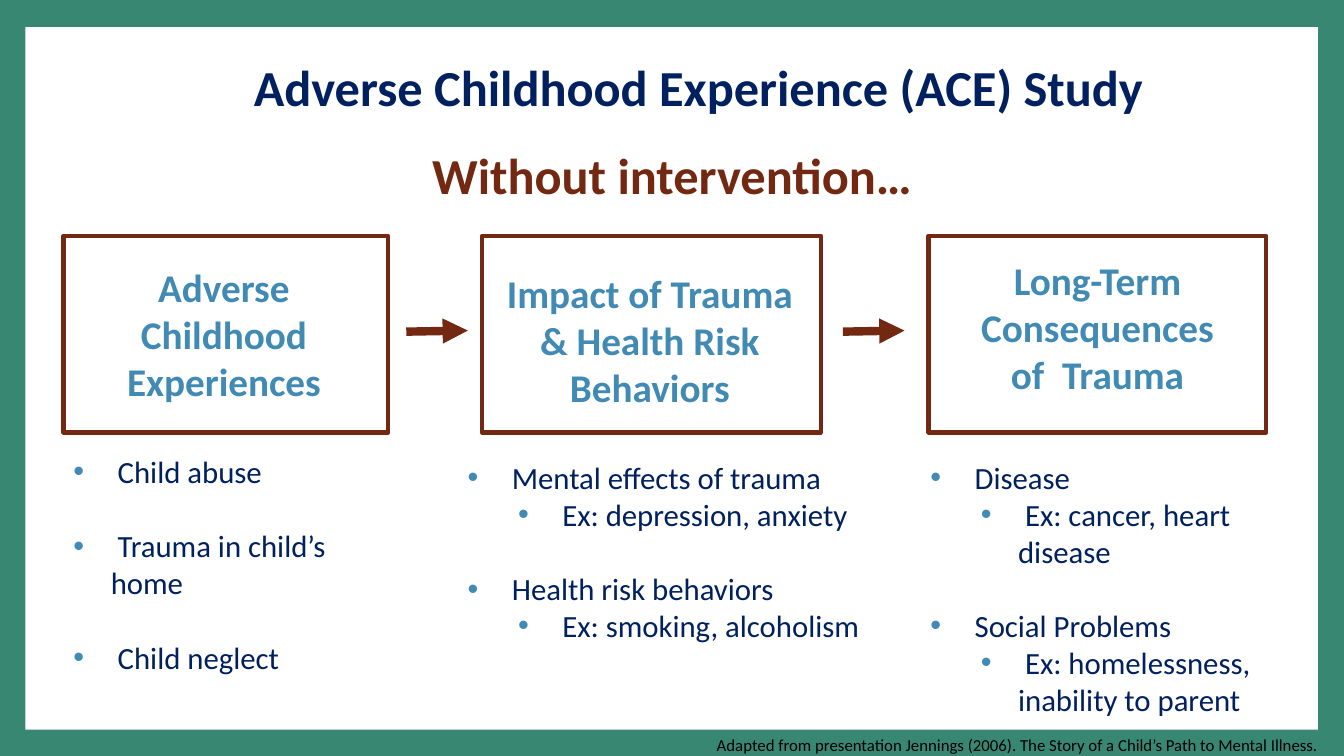
from dataclasses import dataclass

from lxml import etree
from pptx import Presentation, util as u
from pptx.dml.color import RGBColor
from pptx.enum import shapes, text
from pptx.oxml.ns import qn

WIDE, HIGH = 13.33, 7.5
NAVY, RUST, BLUE, GREEN = "002060", "722811", "418AB3", "388773"
WHITE, BLACK = "FFFFFF", "000000"
FONT = "Calibri"
BOX_TOP, BOX_HIGH, HEAD_HIGH = 31.2, 26, 20.13
HANG, STEP, GAP = 0.37, 0.5, 26.8


@dataclass(frozen=True)
class Area:
    left: float
    top: float
    width: float
    height: float

    def place(self) -> tuple[int, int, int, int]:
        return across(self.left), down(self.top), across(self.width), down(self.height)


@dataclass(frozen=True)
class Item:
    words: str
    level: int = 0
    gap: bool = False


@dataclass(frozen=True)
class Stage:
    left: float
    width: float
    head: Area
    lines: tuple[str, ...]
    body: Area
    items: tuple[Item, ...]


STAGES = (
    Stage(4.73, 24.16, Area(4.73, 34.13, 23.86, HEAD_HIGH),
          ("Adverse Childhood", "Experiences"),
          Area(4.73, 59.2, 25.51, 30.93),
          (Item(" Child abuse"),
           Item(" Trauma in child’s home", gap=True),
           Item(" Child neglect", gap=True))),
    Stage(35.86, 25.21, Area(35.78, 34.93, 25.13, HEAD_HIGH),
          ("Impact of Trauma & Health Risk Behaviors",),
          Area(34.06, 60, 31.58, 30.53),
          (Item(" Mental effects of trauma"),
           Item(" Ex: depression, anxiety", 1),
           Item(" Health risk behaviors", gap=True),
           Item(" Ex: smoking, alcoholism", 1))),
    Stage(69.09, 25.13, Area(69.09, 33.2, 25.13, HEAD_HIGH),
          ("Long-Term Consequences", "of  Trauma"),
          Area(68.49, 60, 30.16, 36),
          (Item(" Disease"),
           Item(" Ex: cancer, heart disease", 1),
           Item(" Social Problems", gap=True),
           Item(" Ex: homelessness, inability to parent", 1))),
)
ARROWS = (30.23, 62.72)


def across(share: float) -> int:
    return u.Inches(WIDE * share / 100)


def down(share: float) -> int:
    return u.Inches(HIGH * share / 100)


def color(code: str) -> RGBColor:
    return RGBColor.from_string(code)


def write(para, words: str, *, size: float, ink: str, bold: bool = False,
          center: bool = False, space: float = 1) -> None:
    run = para.add_run()
    run.text = words
    run.font.name = FONT
    run.font.size = u.Pt(size)
    run.font.bold = bold
    run.font.color.rgb = color(ink)
    para.alignment = text.PP_ALIGN.CENTER if center else text.PP_ALIGN.LEFT
    para.line_spacing = space


def add_text(slide, area: Area, lines: tuple[str, ...], **style) -> list:
    frame = slide.shapes.add_textbox(*area.place()).text_frame
    frame.word_wrap = True
    for _ in lines[1:]:
        frame.add_paragraph()
    for para, words in zip(frame.paragraphs, lines):
        write(para, words, **style)
    return list(frame.paragraphs)


def add_box(slide, area: Area, *, fill: str | None = None, edge: str | None = None):
    box = slide.shapes.add_shape(shapes.MSO_SHAPE.RECTANGLE, *area.place())
    box.shadow.inherit = False
    if fill:
        box.fill.solid()
        box.fill.fore_color.rgb = color(fill)
    else:
        box.fill.background()
    if edge:
        box.line.color.rgb = color(edge)
        box.line.width = u.Pt(3)
    else:
        box.line.fill.background()
    return box


def mark(para, item: Item) -> None:
    para.level = item.level
    para.space_before = u.Pt(GAP if item.gap else 0)
    props = para._p.get_or_add_pPr()
    props.set("marL", str(u.Inches(HANG + STEP * item.level)))
    props.set("indent", str(-u.Inches(HANG)))
    tint = etree.SubElement(props, qn("a:buClr"))
    etree.SubElement(tint, qn("a:srgbClr"), val=BLUE)
    etree.SubElement(props, qn("a:buFont"), typeface="Arial")
    etree.SubElement(props, qn("a:buChar"), char="•")


def add_stage(slide, stage: Stage) -> None:
    add_box(slide, Area(stage.left, BOX_TOP, stage.width, BOX_HIGH), edge=RUST)
    add_text(slide, stage.head, stage.lines, size=28, ink=BLUE, bold=True, center=True)
    words = tuple(item.words for item in stage.items)
    paras = add_text(slide, stage.body, words, size=22, ink=NAVY)
    for para, item in zip(paras, stage.items):
        mark(para, item)


def add_arrow(slide, left: float) -> None:
    arrow = slide.shapes.add_connector(
        shapes.MSO_CONNECTOR.STRAIGHT,
        across(left), down(43.87), across(left + 4.58), down(43.73))
    arrow.line.color.rgb = color(RUST)
    arrow.line.width = u.Pt(6)
    etree.SubElement(arrow.line._get_or_add_ln(), qn("a:tailEnd"), type="triangle")
    etree.SubElement(arrow._element.spPr, qn("a:effectLst"))


def add_title(slide, area: Area, words: str) -> None:
    title = slide.shapes.title
    title.left, title.top, title.width, title.height = area.place()
    frame = title.text_frame
    frame.word_wrap = True
    frame.auto_size = text.MSO_AUTO_SIZE.NONE
    frame.vertical_anchor = text.MSO_ANCHOR.MIDDLE
    write(frame.paragraphs[0], words, size=36, ink=NAVY, bold=True, center=True, space=0.9)


def main() -> None:
    deck = Presentation()
    deck.slide_width, deck.slide_height = u.Inches(WIDE), u.Inches(HIGH)
    slide = deck.slides.add_slide(deck.slide_layouts[5])
    slide.background.fill.solid()
    slide.background.fill.fore_color.rgb = color(GREEN)
    panel = add_box(slide, Area(1.88, 3.6, 96.17, 92.93), fill=WHITE)
    slide.shapes._spTree.insert(2, panel._element)
    add_title(slide, Area(14.78, 4.13, 74.42, 15.6),
              "Adverse Childhood Experience (ACE) Study")
    add_text(slide, Area(4.4, 19.33, 91.22, 9.6), ("Without intervention…",),
             size=36, ink=RUST, bold=True, center=True, space=0.9)
    for stage in STAGES:
        add_stage(slide, stage)
    for left in ARROWS:
        add_arrow(slide, left)
    add_text(slide, Area(52.59, 96.53, 47.4, 3.47),
             ("Adapted from presentation Jennings (2006). "
              "The Story of a Child’s Path to Mental Illness.",),
             size=12, ink=BLACK)
    deck.save("out.pptx")


if __name__ == "__main__":
    main()
